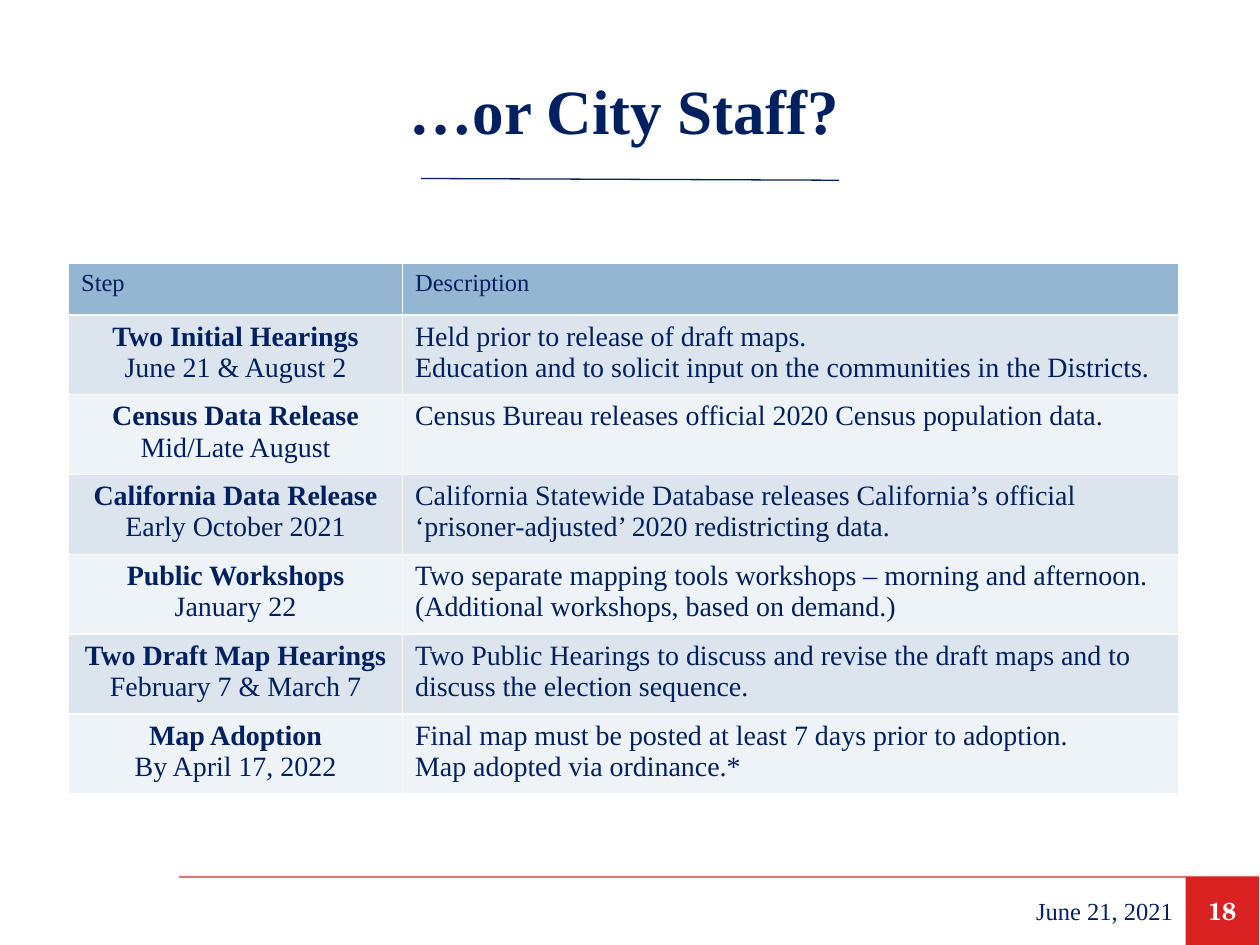
from dataclasses import dataclass

from lxml import etree
from pptx import Presentation
from pptx.dml.color import RGBColor
from pptx.enum.shapes import MSO_CONNECTOR, MSO_SHAPE
from pptx.enum.text import MSO_ANCHOR, PP_ALIGN
from pptx.oxml.ns import qn
from pptx.util import Pt

LEFT, MID, RIGHT = PP_ALIGN.LEFT, PP_ALIGN.CENTER, PP_ALIGN.RIGHT
RECT = MSO_SHAPE.RECTANGLE
LINE = MSO_CONNECTOR.STRAIGHT

TITLE = "…or City Staff?"
DATE = "June 21, 2021"
PAGE = "18"
HEAD = ("Step", "Description")
STEPS = [
    ("Two Initial Hearings", "June 21 & August 2",
     ["Held prior to release of draft maps.",
      "Education and to solicit input on the communities in the Districts."]),
    ("Census Data Release", "Mid/Late August",
     ["Census Bureau releases official 2020 Census population data."]),
    ("California Data Release", "Early October 2021",
     ["California Statewide Database releases California’s official "
      "‘prisoner-adjusted’ 2020 redistricting data."]),
    ("Public Workshops", "January 22",
     ["Two separate mapping tools workshops – morning and afternoon.",
      "(Additional workshops, based on demand.)"]),
    ("Two Draft Map Hearings", "February 7 & March 7",
     ["Two Public Hearings to discuss and revise the draft maps and to "
      "discuss the election sequence."]),
    ("Map Adoption", "By April 17, 2022",
     ["Final map must be posted at least 7 days prior to adoption.",
      "Map adopted via ordinance.*"]),
]


@dataclass(frozen=True)
class Theme:
    font: str = "Times New Roman"
    badge: str = "TeX Gyre Schola"
    navy: str = "002060"
    white: str = "FFFFFF"
    red: str = "D92121"
    rule: str = "C80000"
    head: str = "94B6D2"
    bands: tuple = ("DCE5EE", "EEF3F7")
    big: int = 36
    body: int = 16
    small: int = 14


T = Theme()
WIDE, HIGH = 720, 540
FOOT = 501.1
COLS = (190.8, 443.5)
HEAD_H, ROW_H = 29.2, 42.7


def paint(fill, tone):
    fill.solid()
    fill.fore_color.rgb = RGBColor.from_string(tone)


def write(frame, lines, size, align, tone=T.navy, face=T.font):
    for i, (text, bold) in enumerate(lines):
        para = frame.add_paragraph() if i else frame.paragraphs[0]
        para.text = text
        para.alignment = align
        font = para.font
        font.name, font.size, font.bold = face, Pt(size), bold
        font.color.rgb = RGBColor.from_string(tone)


def rule(slide, ends, tone, width, alpha=None):
    line = slide.shapes.add_connector(LINE, *map(Pt, ends))
    line.line.width = Pt(width)
    paint(line.line.fill, tone)
    props = line._element.spPr
    if alpha:
        color = props.find(".//" + qn("a:srgbClr"))
        etree.SubElement(color, qn("a:alpha"), val=str(alpha * 1000))
    etree.SubElement(props, qn("a:effectLst"))


def fill_cell(cell, lines, size, align, tone):
    paint(cell.fill, tone)
    write(cell.text_frame, lines, size, align)


def add_steps(slide):
    count = len(STEPS)
    box = map(Pt, (39.2, 150.7, sum(COLS), HEAD_H + count * ROW_H))
    table = slide.shapes.add_table(count + 1, len(COLS), *box).table
    for col, width in zip(table.columns, COLS):
        col.width = Pt(width)
    for i, row in enumerate(table.rows):
        row.height = Pt(ROW_H if i else HEAD_H)
    for cell, text in zip(table.rows[0].cells, HEAD):
        fill_cell(cell, [(text, False)], T.small, LEFT, T.head)
    for i, (step, when, notes) in enumerate(STEPS):
        name, about = table.rows[i + 1].cells
        tone = T.bands[i % 2]
        fill_cell(name, [(step, True), (when, False)], T.body, MID, tone)
        fill_cell(about, [(note, False) for note in notes], T.body, LEFT, tone)


def add_foot(slide):
    tall = HIGH - FOOT
    badge = slide.shapes.add_shape(
        RECT, *map(Pt, (677.5, FOOT, 41.8, tall)))
    badge.shadow.inherit = False
    paint(badge.fill, T.red)
    badge.line.fill.background()
    date = slide.shapes.add_textbox(*map(Pt, (552.2, FOOT, 125.3, tall)))
    for shape in (badge, date):
        shape.text_frame.word_wrap = True
        shape.text_frame.vertical_anchor = MSO_ANCHOR.MIDDLE
    write(badge.text_frame, [(PAGE, True)], T.small, MID, T.white, T.badge)
    write(date.text_frame, [(DATE, False)], T.small, RIGHT)


def main():
    deck = Presentation()
    deck.slide_width, deck.slide_height = Pt(WIDE), Pt(HIGH)
    slide = deck.slides.add_slide(deck.slide_layouts[5])
    rule(slide, (102.2, FOOT, 719.3, FOOT), T.rule, 1.25, 55)
    title = slide.shapes.title
    title.left, title.top, title.width, title.height = map(
        Pt, (23.8, 23.8, 666, 77.8))
    title.text_frame.vertical_anchor = MSO_ANCHOR.MIDDLE
    write(title.text_frame, [(TITLE, True)], T.big, MID)
    add_foot(slide)
    rule(slide, (240.5, 102, 479.5, 103), T.navy, 0.75)
    add_steps(slide)
    deck.save("out.pptx")


if __name__ == "__main__":
    main()
